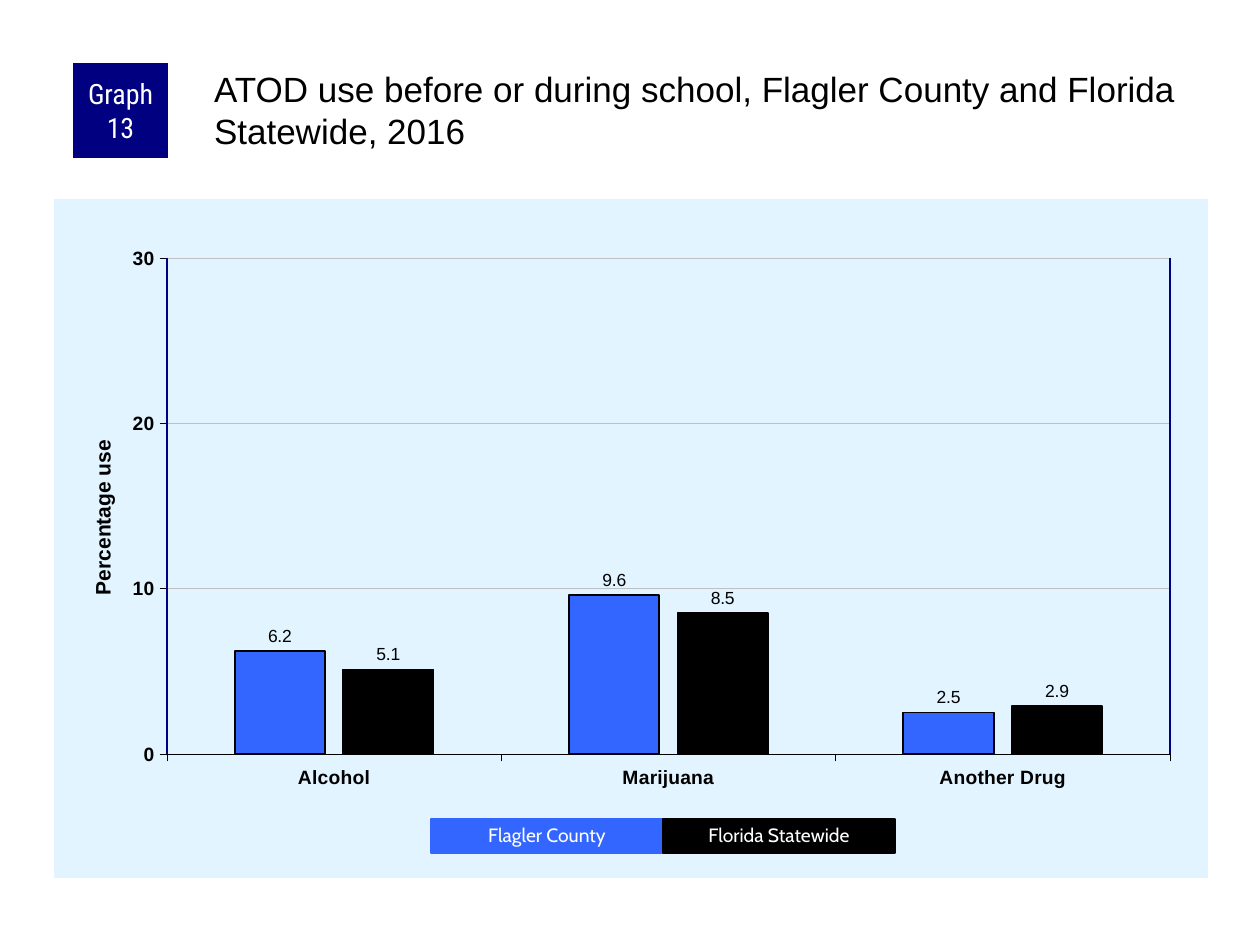
from lxml import etree
from pptx import Presentation, util as u
from pptx.chart.data import CategoryChartData
from pptx.dml.color import RGBColor
from pptx.enum import chart as ch, shapes, text
from pptx.oxml.ns import qn

# Content
TITLE = "ATOD use before or during school, Flagler County and Florida Statewide, 2016"
BADGE = "Graph 13"
AXIS = "Percentage use"
CATS = ["Alcohol", "Marijuana", "Another Drug"]
SERIES = [
    ("Flagler County", "blue", (6.2, 9.6, 2.5)),
    ("Florida Statewide", "black", (5.1, 8.5, 2.9)),
]
HEX = {"blue": "3366FF", "black": "000000", "navy": "000080",
       "white": "FFFFFF", "pale": "E1F4FF", "grid": "C0C0C0"}

# Places in px: left, top, width, height
PX = 914400 / 126
PANEL = (54, 199, 1154, 679)
PLOT = (167, 258, 1003, 496)
LABEL = (86, 436)
KEY = (431, 819, 232, 34)


def emu(*nums):
    return [u.Emu(round(n * PX)) for n in nums]


def rgb(name):
    return RGBColor.from_string(HEX[name])


def style(font, size, name="Arial", color="black", bold=False):
    font.size, font.name, font.bold = u.Pt(size), name, bold
    font.color.rgb = rgb(color)


def stroke(line, color, width):
    line.color.rgb = rgb(color)
    line.width = u.Pt(width)


def inset(frame, *sides):
    (frame.margin_left, frame.margin_top,
     frame.margin_right, frame.margin_bottom) = emu(*sides)


def box(spot, words, fill, font, size):
    shape = slide.shapes.add_shape(shapes.MSO_SHAPE.RECTANGLE, *emu(*spot))
    shape.shadow.inherit = False
    shape.fill.solid()
    shape.fill.fore_color.rgb = rgb(fill)
    shape.line.fill.background()
    frame = shape.text_frame
    frame.word_wrap = True
    frame.text = words
    para = frame.paragraphs[0]
    para.alignment = text.PP_ALIGN.CENTER
    style(para.font, size, font, "white")
    return shape


def place(node, spot, inner=False):
    """Fix a chart part at a px spot, as shares of the panel."""
    old = node.find(qn("c:layout"))
    if old is None:
        old = etree.Element(qn("c:layout"))
        node.insert(0, old)
    man = etree.SubElement(old, qn("c:manualLayout"))
    rows = [("layoutTarget", "inner")] if inner else []
    rows += [("xMode", "edge"), ("yMode", "edge")]
    shares = [(spot[0] - PANEL[0]) / PANEL[2], (spot[1] - PANEL[1]) / PANEL[3]]
    shares += [n / full for n, full in zip(spot[2:], PANEL[2:])]
    rows += [(key, f"{val:.4f}") for key, val in zip("xywh", shares)]
    for key, val in rows:
        etree.SubElement(man, qn("c:" + key), val=val)


prs = Presentation()
prs.slide_width, prs.slide_height = emu(1260, 945)
slide = prs.slides.add_slide(prs.slide_layouts[5])

# Title
head = slide.shapes.title
head.left, head.top, head.width, head.height = emu(210, 63, 998, 105)
frame = head.text_frame
frame.text = TITLE
frame.word_wrap = True
frame.auto_size = text.MSO_AUTO_SIZE.NONE
frame.vertical_anchor = text.MSO_ANCHOR.TOP
inset(frame, 4, 4, 0, 0)
frame.paragraphs[0].alignment = text.PP_ALIGN.LEFT
style(frame.paragraphs[0].font, 20)

# Chart
data = CategoryChartData(number_format="0.0")
data.categories = CATS
for name, _, vals in SERIES:
    data.add_series(name, vals)
chart = slide.shapes.add_chart(
    ch.XL_CHART_TYPE.COLUMN_CLUSTERED, *emu(*PANEL), data).chart
chart.has_legend = chart.has_title = False
style(chart.font, 11.5)

# Panel fill and plot place
root = chart.element
back = etree.Element(qn("c:spPr"))
fill = etree.SubElement(back, qn("a:solidFill"))
etree.SubElement(fill, qn("a:srgbClr"), val=HEX["pale"])
edge = etree.SubElement(back, qn("a:ln"))
etree.SubElement(edge, qn("a:noFill"))
root.find(qn("c:chart")).addnext(back)
place(root.find(".//" + qn("c:plotArea")), PLOT, inner=True)

# Bars
plot = chart.plots[0]
plot.gap_width, plot.overlap = 150, -20
plot.vary_by_categories = False
for bars, (_, color, _) in zip(plot.series, SERIES):
    bars.format.fill.solid()
    bars.format.fill.fore_color.rgb = rgb(color)
    stroke(bars.format.line, "black", 1)
    tags = bars.data_labels
    tags.show_value = True
    tags.number_format, tags.number_format_is_linked = "0.0", False
    tags.position = ch.XL_LABEL_POSITION.OUTSIDE_END
    style(tags.font, 10)

# Axes
cat, val = chart.category_axis, chart.value_axis
for axis in (cat, val):
    axis.major_tick_mark = ch.XL_TICK_MARK.OUTSIDE
    axis.minor_tick_mark = ch.XL_TICK_MARK.NONE
    stroke(axis.format.line, "black", 0.25)
    style(axis.tick_labels.font, 11, bold=True)
val.minimum_scale, val.maximum_scale, val.major_unit = 0, 30, 10
val.tick_labels.number_format = "0"
val.tick_labels.number_format_is_linked = False
val.has_major_gridlines = True
stroke(val.major_gridlines.format.line, "grid", 0.25)
name = val.axis_title
name.text_frame.text = AXIS
style(name.text_frame.paragraphs[0].font, 12, bold=True)
node = val.axis_title.text_frame.paragraphs[0].font
title = root.find(".//" + qn("c:valAx")).find(qn("c:title"))
title.find(".//" + qn("a:bodyPr")).set("rot", "-5400000")
place(title, LABEL)

# Navy sides of the plot
for x in (PLOT[0], PLOT[0] + PLOT[2]):
    side = slide.shapes.add_connector(
        shapes.MSO_CONNECTOR.STRAIGHT, *emu(x, PLOT[1], x, PLOT[1] + PLOT[3]))
    stroke(side.line, "navy", 1)
    etree.SubElement(side.element.spPr, qn("a:effectLst"))

# Badge
badge = box((73, 63, 95, 95), BADGE, "navy", "Roboto Condensed", 16)
inset(badge.text_frame, 6, 0, 6, 0)

# Key
left, top, wide, high = KEY
for i, (name, color, _) in enumerate(SERIES):
    tab = box((left + i * wide, top, wide, high), name, color, "Cabin", 11)
    stroke(tab.line, color, 0.75)
    tab.text_frame.auto_size = text.MSO_AUTO_SIZE.SHAPE_TO_FIT_TEXT
    tab.text_frame.paragraphs[0].line_spacing = 0.9

prs.save("out.pptx")
